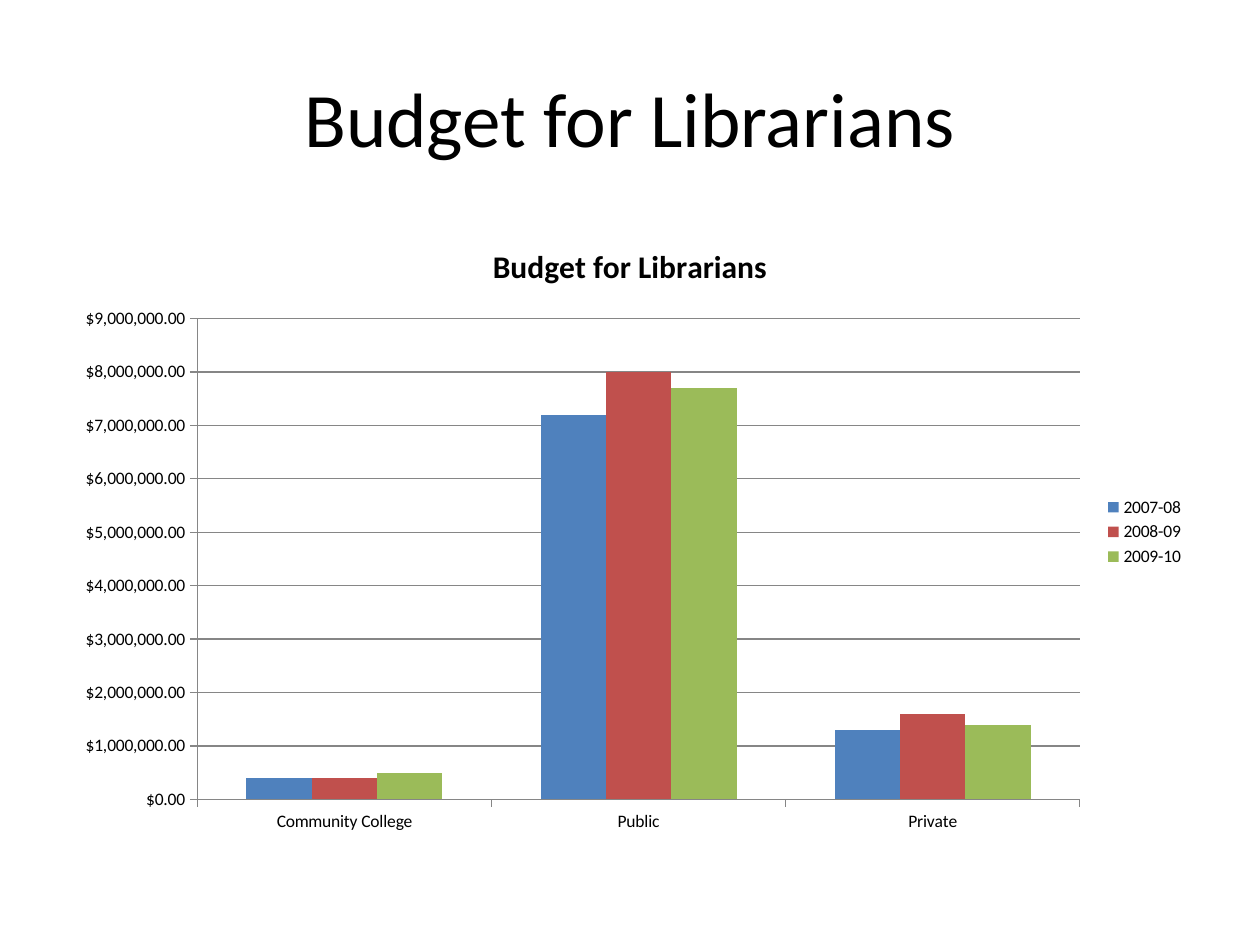
from dataclasses import dataclass
from pptx import Presentation
from pptx.chart.data import CategoryChartData
from pptx.dml.color import RGBColor
from pptx.enum.chart import XL_CHART_TYPE, XL_LEGEND_POSITION, XL_TICK_MARK
from pptx.enum.text import MSO_ANCHOR, PP_ALIGN
from pptx.util import Pt

SCALE = 914400 / 126
FACE = "Calibri"
HEAD = "Budget for Librarians"
MONEY = '"$"#,##0.00'


@dataclass
class Box:
    left: int
    top: int
    width: int
    height: int


@dataclass
class Year:
    name: str
    sums: tuple
    hue: str


KINDS = ("Community College", "Public", "Private")
YEARS = (
    Year("2007-08", (400000, 7200000, 1300000), "4F81BD"),
    Year("2008-09", (400000, 8000000, 1600000), "C0504D"),
    Year("2009-10", (500000, 7700000, 1400000), "9BBB59"),
)


def px(size: int) -> int:
    return round(size * SCALE)


def place(box: Box) -> tuple:
    return px(box.left), px(box.top), px(box.width), px(box.height)


def tint(part, hue: str) -> None:
    part.rgb = RGBColor.from_string(hue)


def style(font, size: int, bold: bool = False) -> None:
    font.name = FACE
    font.size = Pt(size)
    font.bold = bold
    tint(font.color, "000000")


def draw_title(slide, box: Box) -> None:
    title = slide.shapes.title
    title.left, title.top, title.width, title.height = place(box)
    frame = title.text_frame
    frame.text = HEAD
    frame.vertical_anchor = MSO_ANCHOR.MIDDLE
    para = frame.paragraphs[0]
    para.alignment = PP_ALIGN.CENTER
    style(para.runs[0].font, 44)


def draw_line(line) -> None:
    line.width = Pt(0.75)
    tint(line.color, "868686")


def draw_chart(slide, box: Box) -> None:
    data = CategoryChartData(number_format=MONEY)
    data.categories = KINDS
    for year in YEARS:
        data.add_series(year.name, year.sums)
    chart = slide.shapes.add_chart(
        XL_CHART_TYPE.COLUMN_CLUSTERED, *place(box), data).chart
    style(chart.font, 10)

    chart.has_title = True
    frame = chart.chart_title.text_frame
    frame.text = HEAD
    style(frame.paragraphs[0].runs[0].font, 18, True)
    chart.chart_title.include_in_layout = False

    chart.has_legend = True
    chart.legend.position = XL_LEGEND_POSITION.RIGHT
    chart.legend.include_in_layout = False

    for axis in (chart.category_axis, chart.value_axis):
        axis.major_tick_mark = XL_TICK_MARK.OUTSIDE
        axis.minor_tick_mark = XL_TICK_MARK.NONE
        draw_line(axis.format.line)
    scale = chart.value_axis
    scale.minimum_scale = 0
    scale.maximum_scale = 9000000
    scale.major_unit = 1000000
    scale.has_major_gridlines = True
    draw_line(scale.major_gridlines.format.line)
    scale.tick_labels.number_format = MONEY
    scale.tick_labels.number_format_is_linked = False

    plot = chart.plots[0]
    plot.vary_by_categories = False
    plot.gap_width = 150
    plot.overlap = 0
    for bars, year in zip(plot.series, YEARS):
        bars.format.fill.solid()
        tint(bars.format.fill.fore_color, year.hue)


def main() -> None:
    deck = Presentation()
    deck.slide_width = px(1260)
    deck.slide_height = px(945)
    slide = deck.slides.add_slide(deck.slide_layouts[5])
    draw_title(slide, Box(63, 38, 1134, 158))
    draw_chart(slide, Box(63, 220, 1134, 624))
    deck.save("out.pptx")


if __name__ == "__main__":
    main()
